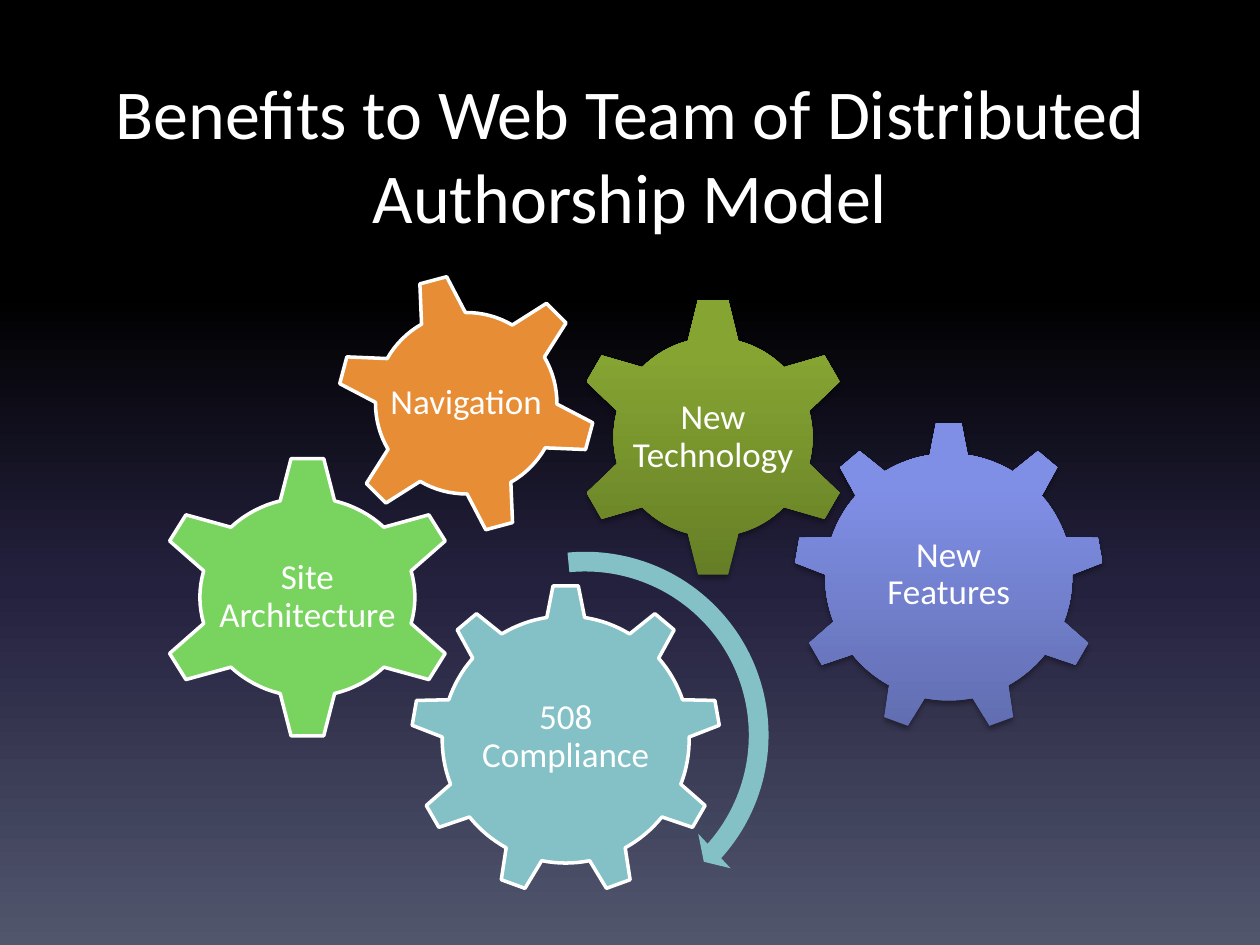
"""Build a slide of interlocking gears that lists web team benefits."""
import copy
import dataclasses
import math

import pptx
import pptx.dml.color
import pptx.enum.shapes
import pptx.enum.text
import pptx.oxml
import pptx.oxml.ns
import pptx.util

Inches = pptx.util.Inches
Pt = pptx.util.Pt
qn = pptx.oxml.ns.qn


@dataclasses.dataclass(frozen=True)
class Theme:
    """Colours, font and type sizes."""
    font: str = "Calibri"
    title: int = 40
    label: int = 20
    text: str = "FFFFFF"
    edge: str = "FFFFFF"
    night: tuple = ((0, "000000"), (0.31, "000000"), (0.62, "24213E"), (1, "51566D"))
    blue: tuple = ((0, "626EB1"), (0.8, "808FE6"), (1, "7E8EE9"))
    olive: tuple = ((0, "667F26"), (0.8, "85A432"), (1, "87A730"))
    teal: str = "83C1C6"
    green: str = "78D45E"
    orange: str = "E78D35"


@dataclasses.dataclass(frozen=True)
class Gear:
    """Tooth count and sizes in inches: body and tip radius, half widths."""
    teeth: int
    body: float
    tip: float
    root: float
    end: float
    text: float
    wide: float = 1
    turn: float = 0


THEME = Theme()
NINE = Gear(9, 0.98, 1.22, 0.15, 0.1, 1.42)
SIX = Gear(6, 0.79, 1.09, 0.2, 0.12, 1.35)
BROAD = Gear(6, 0.79, 1.1, 0.2, 0.12, 1.52, wide=1.08)
TILT = Gear(6, 0.72, 1.01, 0.18, 0.11, 1.34, turn=-15)
GEARS = (
    ("New Features", NINE, 7.53, 4.58, THEME.blue),
    ("New Technology", SIX, 5.66, 3.47, THEME.olive),
    ("508 Compliance", NINE, 4.49, 5.87, THEME.teal),
    ("Site Architecture", BROAD, 2.44, 4.74, THEME.green),
    ("Navigation", TILT, 3.7, 3.2, THEME.orange),
)


def rgb(code):
    """Return a colour from its hex code."""
    return pptx.dml.color.RGBColor.from_string(code)


def blend(fill, root, stops, angle):
    """Give a fill a linear gradient with any number of stops."""
    fill.gradient()
    fill.gradient_angle = angle
    group = root.find(".//" + qn("a:gsLst"))
    while len(group) < len(stops):
        group.append(copy.deepcopy(group[0]))
    for stop, (place, code) in zip(fill.gradient_stops, stops):
        stop.position = place
        stop.color.rgb = rgb(code)


def shade(shape):
    """Add a soft shadow below a shape."""
    blur, drop = Pt(3.1), Pt(1.8)
    effect = shape._element.spPr.find(qn("a:effectLst"))
    effect.append(pptx.oxml.parse_xml(
        f'<a:outerShdw {pptx.oxml.ns.nsdecls("a")} blurRad="{blur}" dist="{drop}" '
        'dir="5400000" rotWithShape="0"><a:srgbClr val="000000">'
        '<a:alpha val="35000"/></a:srgbClr></a:outerShdw>'))


def style(para, size):
    """Set the font and centring of a paragraph."""
    para.alignment = pptx.enum.text.PP_ALIGN.CENTER
    para.font.name = THEME.font
    para.font.size = Pt(size)
    para.font.color.rgb = rgb(THEME.text)


def outline(gear):
    """Return the points of a gear around its centre."""
    step = math.tau / gear.teeth
    lean = math.asin(gear.root / gear.body)
    base = gear.body * math.cos(lean)
    tooth = ((-gear.root, base), (-gear.end, gear.tip),
             (gear.end, gear.tip), (gear.root, base))
    arc = [lean + (step - 2 * lean) * k / 8 for k in range(1, 8)]
    part = [*tooth, *((gear.body * math.sin(a), gear.body * math.cos(a)) for a in arc)]
    points = []
    for k in range(gear.teeth):
        turn = math.radians(gear.turn) + k * step
        sin, cos = math.sin(turn), math.cos(turn)
        points += [(gear.wide * (x * cos + y * sin), x * sin - y * cos) for x, y in part]
    return points


def draw_gear(slide, name, gear, mid, top, paint):
    """Draw a labelled gear around a centre."""
    points = [(Inches(mid + x), Inches(top + y)) for x, y in outline(gear)]
    path = slide.shapes.build_freeform(*points[0])
    path.add_line_segments(points[1:], close=True)
    shape = path.convert_to_shape()
    shape.shadow.inherit = False
    if isinstance(paint, str):
        shape.fill.solid()
        shape.fill.fore_color.rgb = rgb(paint)
        shape.line.color.rgb = rgb(THEME.edge)
        shape.line.width = Pt(2)
    else:
        shape.line.fill.background()
        blend(shape.fill, shape._element.spPr, paint, 90)
        shade(shape)
    frame = shape.text_frame
    frame.word_wrap = True
    frame.vertical_anchor = pptx.enum.text.MSO_ANCHOR.MIDDLE
    frame.margin_top = frame.margin_bottom = 0
    frame.margin_left = frame.margin_right = (shape.width - Inches(gear.text)) // 2
    frame.text = name
    para = frame.paragraphs[0]
    style(para, THEME.label)
    para.line_spacing = 0.9


def draw_arrow(slide, left, top, size):
    """Draw the curved arrow in a square box."""
    kind = pptx.enum.shapes.MSO_SHAPE.CIRCULAR_ARROW
    arrow = slide.shapes.add_shape(kind, Inches(left), Inches(top), Inches(size), Inches(size))
    arrow.shadow.inherit = False
    for k, value in enumerate((0.05, 2.99, 25.13, 158.68, 0.06)):
        arrow.adjustments[k] = value
    arrow.fill.solid()
    arrow.fill.fore_color.rgb = rgb(THEME.teal)
    arrow.line.fill.background()


def draw_title(slide, left, top, width, height):
    """Fill and place the title."""
    title = slide.shapes.title
    title.left, title.top = Inches(left), Inches(top)
    title.width, title.height = Inches(width), Inches(height)
    frame = title.text_frame
    frame.text = "Benefits to Web Team of Distributed Authorship Model"
    frame.word_wrap = True
    frame.auto_size = pptx.enum.text.MSO_AUTO_SIZE.NONE
    frame.vertical_anchor = pptx.enum.text.MSO_ANCHOR.TOP
    style(frame.paragraphs[0], THEME.title)


def main():
    """Build and save the deck."""
    deck = pptx.Presentation()
    deck.slide_width, deck.slide_height = Inches(10), Inches(7.5)
    slide = deck.slides.add_slide(deck.slide_layouts.get_by_name("Title Only"))
    blend(slide.background.fill, slide._element.cSld, THEME.night, 270)
    draw_title(slide, 0.5, 0.5, 9, 1.25)
    for item in GEARS:
        draw_gear(slide, *item)
    draw_arrow(slide, 3.08, 4.27, 3.13)
    deck.save("out.pptx")


if __name__ == "__main__":
    main()
